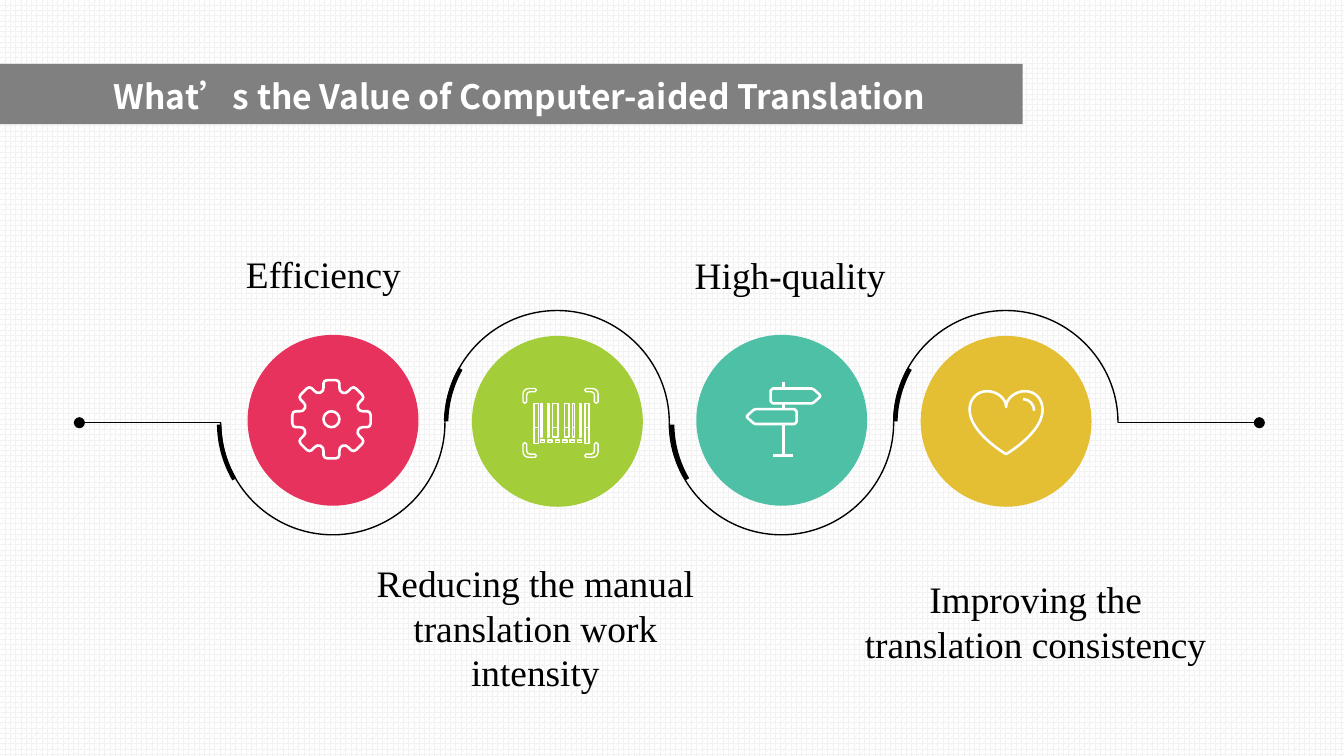
from dataclasses import dataclass
from math import cos, pi, sin

from lxml import etree
from pptx import Presentation
from pptx import util as u
from pptx.dml.color import RGBColor
from pptx.enum import dml, shapes, text
from pptx.oxml.ns import qn


@dataclass(frozen=True)
class Theme:
    ink: str = "000000"
    white: str = "FFFFFF"
    grid: str = "F2F2F2"
    banner: str = "808080"
    efficiency: str = "E6325C"
    effort: str = "A3CD39"
    quality: str = "4EC0A5"
    consistency: str = "E4BE33"
    title_font: str = "Noto Sans CJK SC"
    label_font: str = "Times New Roman"
    title_size: float = 18
    label_size: float = 20
    thin: float = 0.75
    icon_line: float = 1.38


@dataclass(frozen=True)
class Box:
    left: float
    top: float
    width: float
    height: float

    @property
    def center(self):
        return self.left + self.width / 2, self.top + self.height / 2

    def lengths(self):
        return [u.Cm(v) for v in (self.left, self.top, self.width, self.height)]


THEME = Theme()


def rgb(color):
    return RGBColor.from_string(color)


def stroke(part, color, weight):
    part.line.color.rgb = rgb(color)
    part.line.width = u.Pt(weight)


def preset(parent, kind, box, fill=None):
    part = parent.shapes.add_shape(kind, *box.lengths())
    part.shadow.inherit = False
    if fill:
        part.fill.solid()
        part.fill.fore_color.rgb = rgb(fill)
        part.line.fill.background()
    else:
        part.fill.background()
        stroke(part, THEME.white, THEME.thin)
    return part


def outline(parent, center, points, color, weight, closed=True, curved=True):
    cx, cy = center
    spots = [(u.Cm(cx + x), u.Cm(cy + y)) for x, y in points]
    builder = parent.shapes.build_freeform(*spots[0], scale=1.0)
    builder.add_line_segments(spots[1:], close=closed)
    part = builder.convert_to_shape()
    part.shadow.inherit = False
    part.fill.background()
    stroke(part, color, weight)
    if curved:
        steps = list(part._element.iter(qn("a:lnTo")))
        for i in range(0, len(steps) - 2, 3):
            curve = etree.Element(qn("a:cubicBezTo"))
            steps[i].addprevious(curve)
            for step in steps[i:i + 3]:
                curve.append(step[0])
                step.getparent().remove(step)


def segment(parent, center, start, end, color, weight, dot=False):
    cx, cy = center
    ends = [u.Cm(v) for v in (cx + start[0], cy + start[1], cx + end[0], cy + end[1])]
    part = parent.shapes.add_connector(shapes.MSO_CONNECTOR.STRAIGHT, *ends)
    stroke(part, color, weight)
    if dot:
        etree.SubElement(part.line._get_or_add_ln(), qn("a:tailEnd"), type="oval")
    etree.SubElement(part._element.spPr, qn("a:effectLst"))


def half_circle(r, side):
    k = 0.55 * r
    points = [(r, 0), (r, k), (k, r), (0, r), (-k, r), (-r, k), (-r, 0)]
    return [(x, side * y) for x, y in points]


def write(slide, box, content, font, size, color, align, spacing=None, bold=False):
    frame = slide.shapes.add_textbox(*box.lengths()).text_frame
    frame.word_wrap = True
    frame.auto_size = text.MSO_AUTO_SIZE.SHAPE_TO_FIT_TEXT
    paragraph = frame.paragraphs[0]
    paragraph.alignment = align
    if spacing:
        paragraph.line_spacing = u.Pt(spacing)
    run = paragraph.add_run()
    run.text = content
    run.font.name, run.font.size, run.font.bold = font, u.Pt(size), bold
    run.font.color.rgb = rgb(color)
    etree.SubElement(run.font._element, qn("a:ea"), typeface=font)


def banner(slide, box, title):
    preset(slide, shapes.MSO_SHAPE.RECTANGLE, box, THEME.banner)
    write(slide, Box(box.left + 1.9, box.top + 0.1, 18.54, 1.02), title, THEME.title_font,
          THEME.title_size, THEME.white, text.PP_ALIGN.LEFT, bold=True)


def track(slide, box, lead, nudges):
    group = slide.shapes.add_group_shape()
    pitch = (box.width - 2 * lead) / len(nudges)
    radius = pitch / 2
    first = box.left + lead
    last = box.left + box.width - lead
    middle = box.center[1]
    for i, nudge in enumerate(nudges):
        left = first + i * pitch
        below = i % 2 == 0
        outline(group, (left + radius, middle), half_circle(radius, 1 if below else -1),
                THEME.ink, THEME.thin, closed=False)
        accent = preset(group, shapes.MSO_SHAPE.BLOCK_ARC,
                        Box(left + nudge, middle - radius, pitch + 0.03, pitch + 0.03), THEME.ink)
        sweep = (107.82, 125.69, 0.02) if below else (108.62, 125.75, 0.02)
        for k, value in enumerate(sweep):
            accent.adjustments[k] = value
        accent.rotation = 330 if below else 0
    for edge, step in ((first, -lead), (last, lead)):
        segment(group, (edge, middle), (0, 0), (step, 0), THEME.ink, THEME.thin, dot=True)


def gear(group, center):
    cx, cy = center
    hub = cx - 0.03, cy - 0.02
    flank = [(-0.16, -0.52), (-0.15, -0.56), (-0.15, -0.6), (-0.15, -0.6), (-0.15, -0.68),
             (-0.15, -0.68), (-0.15, -0.71), (-0.12, -0.74), (-0.08, -0.74), (-0.08, -0.74)]
    tooth = flank + [(-x, y) for x, y in reversed(flank)] + [(0.21, -0.5)]
    turns = [i * pi / 4 for i in range(8)]
    rim = [(x * cos(a) - y * sin(a), x * sin(a) + y * cos(a)) for a in turns for x, y in tooth]
    outline(group, hub, rim[-1:] + rim, THEME.white, THEME.icon_line)
    hole = half_circle(0.15, 1) + [(-x, -y) for x, y in half_circle(0.15, 1)[1:]]
    outline(group, hub, hole, THEME.white, THEME.icon_line)


def barcode(group, center):
    cx, cy = center
    bars = [(-0.44, 0.08), (-0.32, 0.03), (-0.19, 0.03), (-0.09, 0.1),
            (0.14, 0.08), (0.29, 0.03), (0.42, 0.03), (0.52, 0.08)]
    tall = (bars[0], bars[-1])
    cells = [(x, -0.34, w, 0.46) for x, w in bars]
    cells += [(x, 0.12, w, 0.3 if (x, w) in tall else 0.18) for x, w in bars]
    cells += [(-0.32 + 0.14 * i, 0.35, 0.08, 0.05) for i in range(6)]
    for x, y, w, h in cells:
        preset(group, shapes.MSO_SHAPE.RECTANGLE, Box(cx + x, cy + y, w, h))
    bracket = [(-0.71, -0.54), (-0.71, -0.6), (-0.67, -0.65), (-0.6, -0.65),
               (-0.6, -0.65), (-0.48, -0.65), (-0.48, -0.65),
               (-0.45, -0.65), (-0.45, -0.59), (-0.48, -0.59),
               (-0.48, -0.59), (-0.58, -0.59), (-0.58, -0.59),
               (-0.62, -0.59), (-0.64, -0.56), (-0.64, -0.52),
               (-0.64, -0.52), (-0.64, -0.4), (-0.64, -0.4),
               (-0.64, -0.36), (-0.71, -0.36), (-0.71, -0.4)]
    for sx in (1, -1):
        for sy in (1, -1):
            outline(group, (cx + 0.06, cy + 0.03), [(sx * x, sy * y) for x, y in bracket],
                    THEME.white, THEME.thin)


def signpost(group, center):
    cx, cy = center
    edge = [(-0.47, -0.1), (-0.43, -0.14), (0.31, -0.14), (0.35, -0.12), (0.45, -0.03), (0.47, 0)]
    board = edge + [(x, -y) for x, y in reversed(edge[:-1])]
    for dx, dy, side in ((0.26, -0.46, 1), (-0.19, -0.07, -1)):
        outline(group, (cx + dx, cy + dy), [(side * x, y) for x, y in board],
                THEME.white, THEME.icon_line, curved=False)
    pole = [((0.03, a), (0.03, b)) for a, b in ((0.08, 0.65), (-0.22, -0.32), (-0.6, -0.73))]
    for start, end in pole + [((-0.17, 0.66), (0.22, 0.66))]:
        segment(group, center, start, end, THEME.white, THEME.icon_line)


def heart(group, center):
    half = [(0, -0.27), (0, -0.44), (-0.18, -0.57), (-0.36, -0.57),
            (-0.56, -0.57), (-0.69, -0.41), (-0.69, -0.22),
            (-0.69, 0.22), (0, 0.62), (0, 0.62)]
    whole = half + [(-x, y) for x, y in reversed(half[:-1])]
    outline(group, center, whole, THEME.white, THEME.icon_line)
    gleam = [(0.53, -0.2), (0.53, -0.32), (0.44, -0.42), (0.32, -0.42)]
    outline(group, center, gleam, THEME.white, THEME.icon_line, closed=False)


def station(slide, box, color, icon):
    group = slide.shapes.add_group_shape()
    preset(group, shapes.MSO_SHAPE.OVAL, box, color)
    icon(group, box.center)


def label(slide, box, content, align, spacing):
    write(slide, box, content, THEME.label_font, THEME.label_size, THEME.ink, align, spacing)


def main():
    deck = Presentation()
    deck.slide_width, deck.slide_height = u.Cm(25.4), u.Cm(14.29)
    slide = deck.slides.add_slide(deck.slide_layouts[6])
    fill = slide.background.fill
    fill.patterned()
    fill.pattern = dml.MSO_PATTERN.SPHERE
    fill.fore_color.rgb, fill.back_color.rgb = rgb(THEME.grid), rgb(THEME.white)

    banner(slide, Box(0, 1.21, 19.33, 1.14), "What’s the Value of Computer-aided Translation")
    track(slide, Box(1.5, 5.87, 22.3, 4.24), 2.67, (-0.07, -0.02, 0.01, -0.01))
    stations = [(THEME.effort, barcode, 1, 6.35), (THEME.efficiency, gear, 0, 6.33),
                (THEME.quality, signpost, 2, 6.33), (THEME.consistency, heart, 3, 6.35)]
    for color, icon, place, top in stations:
        station(slide, Box(4.68 + 4.24 * place, top, 3.23, 3.23), color, icon)
    justify, center = text.PP_ALIGN.JUSTIFY, text.PP_ALIGN.CENTER
    label(slide, Box(4.4, 5.05, 5.59, 0.74), "Efficiency", justify, 12)
    label(slide, Box(12.88, 5.07, 5.59, 0.74), "High-quality", justify, 12)
    label(slide, Box(6.5, 10.46, 7.24, 2.82), "Reducing the manual translation work intensity", center, 24)
    label(slide, Box(15.78, 10.77, 7.59, 1.96), "Improving the translation consistency", center, 24)
    deck.save("out.pptx")


if __name__ == "__main__":
    main()
